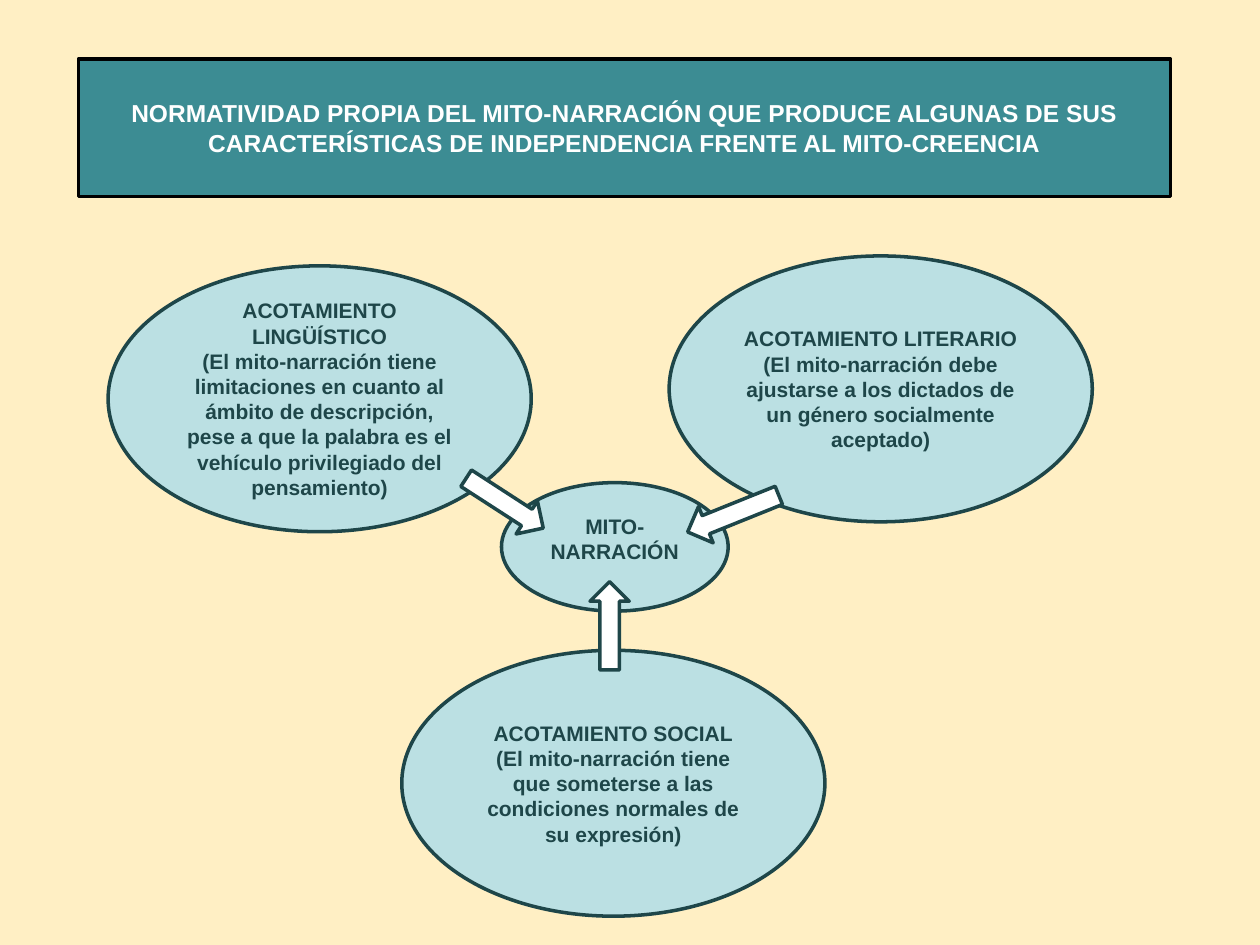
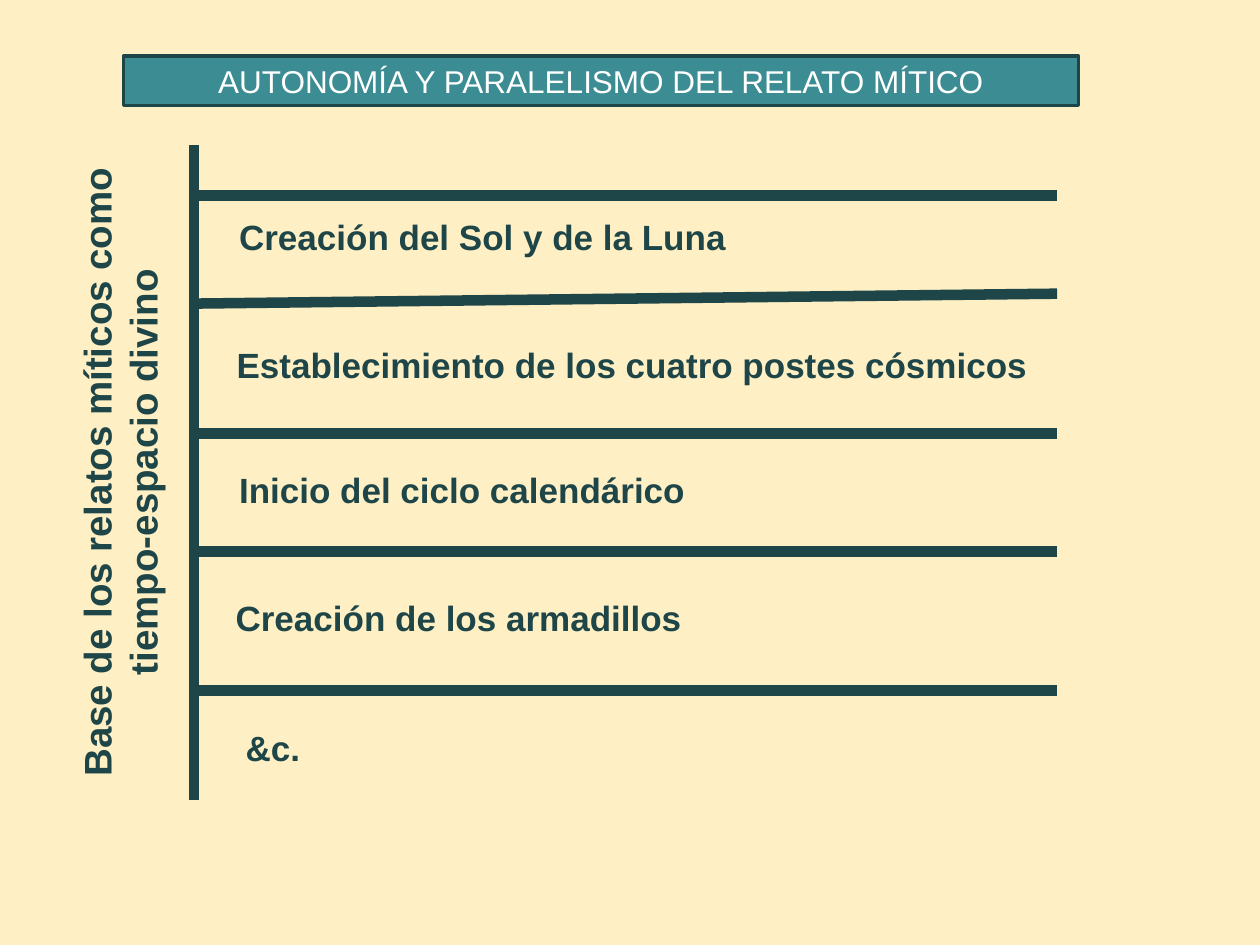
from lxml import etree
from pptx import Presentation
from pptx.dml.color import RGBColor
from pptx.enum.shapes import MSO_CONNECTOR, MSO_SHAPE
from pptx.enum.text import MSO_ANCHOR, PP_ALIGN
from pptx.oxml.ns import qn
from pptx.util import Cm, Pt

RECT = MSO_SHAPE.RECTANGLE
OVAL = MSO_SHAPE.OVAL
ARROW = MSO_SHAPE.RIGHT_ARROW
STRAIGHT = MSO_CONNECTOR.STRAIGHT
CENTER = PP_ALIGN.CENTER
LEFT = PP_ALIGN.LEFT
MIDDLE = MSO_ANCHOR.MIDDLE
TOP = MSO_ANCHOR.TOP

CREAM = RGBColor(0xFF, 0xEF, 0xC4)
TEAL = RGBColor(0x3C, 0x8C, 0x93)
PALE = RGBColor(0xBB, 0xE0, 0xE3)
DARK = RGBColor(0x1E, 0x46, 0x49)
WHITE = RGBColor(0xFF, 0xFF, 0xFF)
BLACK = RGBColor(0x00, 0x00, 0x00)

TITLE_BOLD = {"size": Pt(14), "bold": True}
TITLE_PLAIN = {"size": Pt(18), "bold": False}
BODY = {"size": Pt(12), "bold": True}
ROW = {"size": Pt(20), "bold": True}
SIDE = {"size": Pt(22), "bold": True}

OVAL_SIZE = (8.53, 5.36)
LIMITS = [
    (0, 0.2, "ACOTAMIENTO LINGÜÍSTICO",
     "(El mito-narración tiene limitaciones en cuanto al ámbito de descripción, "
     "pese a que la palabra es el vehículo privilegiado del pensamiento)"),
    (5.92, 7.95, "ACOTAMIENTO SOCIAL",
     "(El mito-narración tiene que someterse a las condiciones normales de su expresión)"),
    (11.31, 0, "ACOTAMIENTO LITERARIO",
     "(El mito-narración debe ajustarse a los dictados de un género socialmente aceptado)"),
]
ARROWS = [(9.22, 7.06, 1.78, 270), (7.07, 4.59, 1.85, 32.9), (11.61, 4.8, 1.98, 158.1)]

RULES = [(1.02, 1.02), (3.2, 3.0), (5.82, 5.82), (8.2, 8.2), (11.0, 11.0)]
STORIES = [
    (0.66, 1.3, 12.27, "Creación del Sol y de la Luna"),
    (0.61, 3.89, 16.59, "Establecimiento de los cuatro postes cósmicos"),
    (0.66, 6.4, 9.58, "Inicio del ciclo calendárico"),
    (0.59, 8.99, 9.58, "Creación de los armadillos"),
    (0.79, 11.61, 1.63, "&c."),
]


def cms(*values):
    return [Cm(v) for v in values]


def write(sp, lines, style, color=DARK, align=CENTER, anchor=MIDDLE, wrap=True):
    tf = sp.text_frame
    tf.word_wrap = wrap
    tf.vertical_anchor = anchor
    for i, line in enumerate(lines):
        p = tf.add_paragraph() if i else tf.paragraphs[0]
        p.alignment = align
        r = p.add_run()
        r.text = line
        r.font.color.rgb = color
        for name, value in {"name": "Arial", **style}.items():
            setattr(r.font, name, value)


def add_figure(s, kind, box, fill, line=DARK):
    sp = s.shapes.add_shape(kind, *cms(*box))
    sp.shadow.inherit = False
    sp.fill.solid()
    sp.fill.fore_color.rgb = fill
    sp.line.color.rgb = line
    sp.line.width = Pt(2)
    return sp


def add_rule(s, x1, y1, x2, y2):
    c = s.shapes.add_connector(STRAIGHT, *cms(x1, y1, x2, y2))
    c.line.color.rgb = DARK
    c.line.width = Pt(6)
    etree.SubElement(c.element.spPr, qn("a:effectLst"))


def add_slide(prs):
    s = prs.slides.add_slide(prs.slide_layouts[6])
    s.background.fill.solid()
    s.background.fill.fore_color.rgb = CREAM
    return s


def add_title(s, box, text, style, line):
    write(add_figure(s, RECT, box, TEAL, line), [text], style, WHITE)


def add_limits_diagram(s, left, top):
    for x, y, heading, detail in LIMITS:
        sp = add_figure(s, OVAL, (left + x, top + y, *OVAL_SIZE), PALE)
        write(sp, [heading, detail], BODY)
    core = add_figure(s, OVAL, (left + 7.93, top + 4.57, 4.57, 2.59), PALE)
    write(core, ["MITO-NARRACIÓN"], BODY)
    core.text_frame.margin_bottom = Cm(0.46)
    for x, y, length, angle in ARROWS:
        arrow = add_figure(s, ARROW, (left + x, top + y, length, 0.79), WHITE)
        arrow.rotation = angle


def add_story_ladder(s, left, top, width, height):
    spine = left + 2.61
    add_rule(s, spine, top, spine, top + height)
    for start, end in RULES:
        add_rule(s, spine, top + start, left + width, top + end)
    for x, y, w, text in STORIES:
        tb = s.shapes.add_textbox(*cms(spine + x, top + y, w, 1.12))
        write(tb, [text], ROW, align=LEFT, anchor=TOP, wrap=False)
    side = s.shapes.add_textbox(*cms(left, top + 0.2, 2.21, 12.8))
    write(side, ["Base de los relatos míticos como tiempo-espacio divino"], SIDE)
    side.element.txBody.find(qn("a:bodyPr")).set("vert", "vert270")


def main():
    prs = Presentation()
    prs.slide_width, prs.slide_height = cms(25.4, 19.05)

    s = add_slide(prs)
    add_title(s, (1.58, 1.19, 22.02, 2.77),
              "NORMATIVIDAD PROPIA DEL MITO-NARRACIÓN QUE PRODUCE ALGUNAS DE SUS "
              "CARACTERÍSTICAS DE INDEPENDENCIA FRENTE AL MITO-CREENCIA",
              TITLE_BOLD, BLACK)
    add_limits_diagram(s, 2.18, 5.16)

    s = add_slide(prs)
    add_story_ladder(s, 1.3, 2.92, 20.01, 13.21)
    add_title(s, (2.49, 1.13, 19.25, 1.0),
              "AUTONOMÍA Y PARALELISMO DEL RELATO MÍTICO", TITLE_PLAIN, DARK)

    prs.save("out.pptx")


if __name__ == "__main__":
    main()
